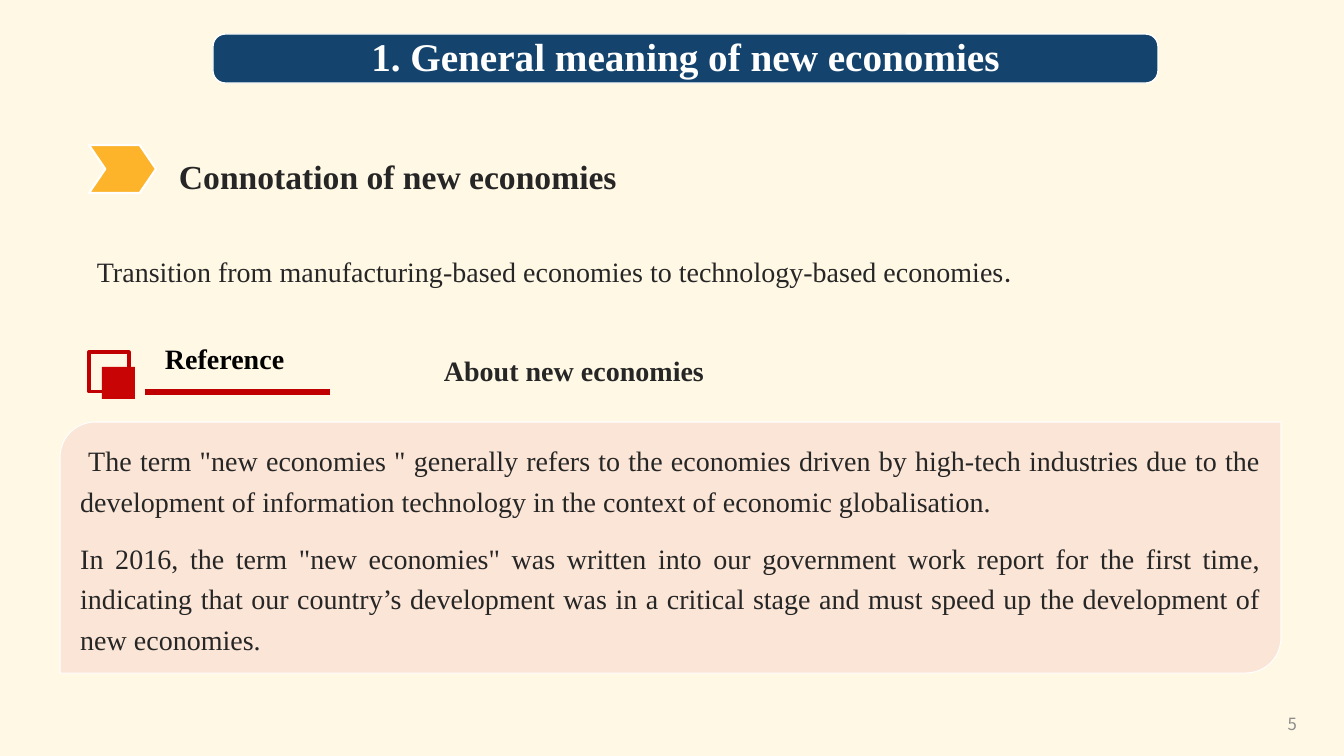
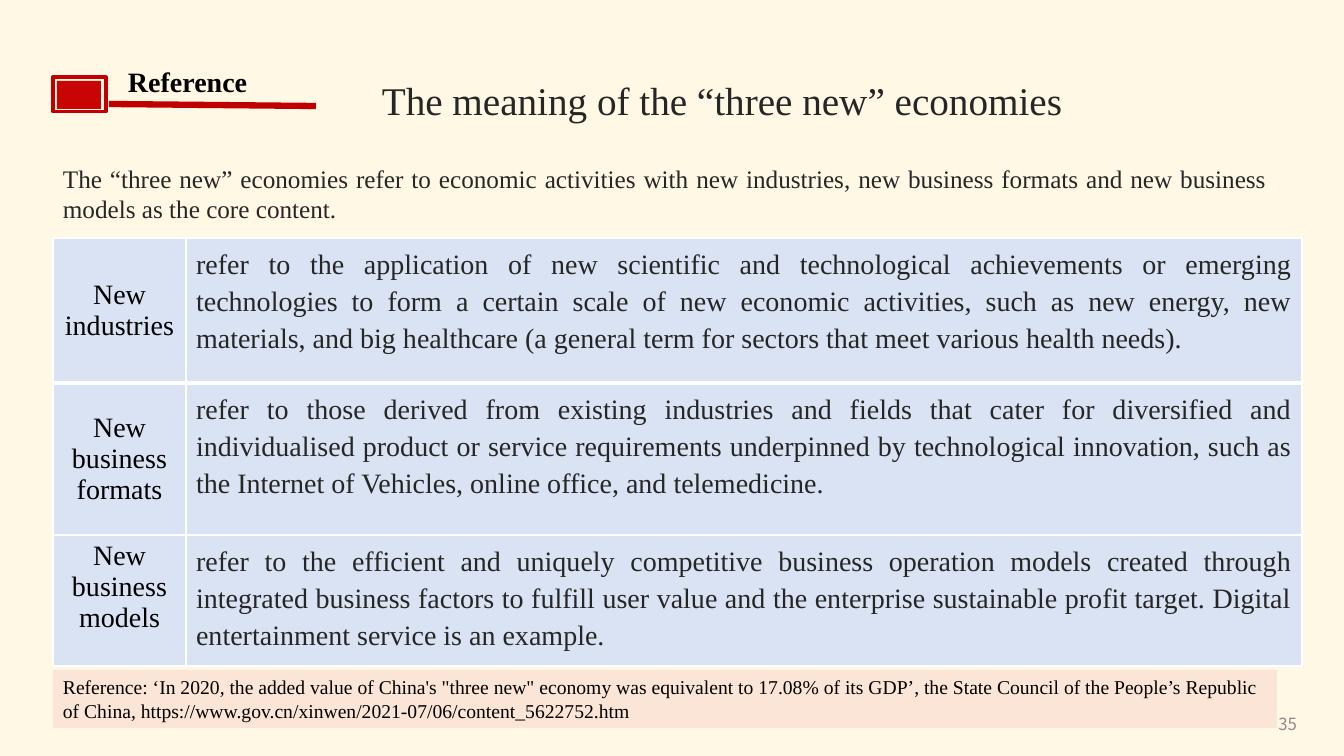
"""Two slides on the meaning of new economies and the "three new" economies."""
from lxml.etree import SubElement
from pptx import Presentation
from pptx.dml.color import RGBColor
from pptx.enum.shapes import MSO_CONNECTOR, MSO_SHAPE
from pptx.enum.text import MSO_ANCHOR, PP_ALIGN
from pptx.oxml.ns import qn
from pptx.util import Emu, Pt

COLORS = {
    "page": "FFF8E5", "navy": "14446E", "amber": "FDB42A", "peach": "FBE5D6",
    "cell": "DAE3F3", "line": "C00000", "red": "C80404", "ink": "262626",
    "black": "000000", "white": "FFFFFF", "grey": "8C8C8C",
}
SERIF = "Times New Roman"
WIDTH, HEIGHT = 1344, 756

CARD = [
    "The term \"new economies \" generally refers to the economies driven by "
    "high-tech industries due to the development of information technology in "
    "the context of economic globalisation.",
    "In 2016, the term \"new economies\" was written into our government work "
    "report for the first time, indicating that our country’s development was "
    "in a critical stage and must speed up the development of new economies.",
]
INTRO = (
    "The “three new” economies refer to economic activities with new industries, "
    "new business formats and new business models as the core content."
)
ECONOMIES = [
    ("New industries", 145, MSO_ANCHOR.MIDDLE,
     "refer to the application of new scientific and technological achievements "
     "or emerging technologies to form a certain scale of new economic "
     "activities, such as new energy, new materials, and big healthcare (a "
     "general term for sectors that meet various health needs)."),
    ("New business formats", 152, MSO_ANCHOR.MIDDLE,
     "refer to those derived from existing industries and fields that cater for "
     "diversified and individualised product or service requirements "
     "underpinned by technological innovation, such as the Internet of "
     "Vehicles, online office, and telemedicine."),
    ("New business models", 131, MSO_ANCHOR.TOP,
     "refer to the efficient and uniquely competitive business operation models "
     "created through integrated business factors to fulfill user value and the "
     "enterprise sustainable profit target. Digital entertainment service is an "
     "example."),
]
SOURCE = (
    "Reference: ‘In 2020, the added value of China's \"three new\" economy was "
    "equivalent to 17.08% of its GDP’, the State Council of the People’s "
    "Republic of China, "
    "https://www.gov.cn/xinwen/2021-07/06/content_5622752.htm"
)


def px(n):
    return Emu(round(n * 12192000 / WIDTH))


def rgb(name):
    return RGBColor.from_string(COLORS[name])


def write(tf, paragraphs, size=20, color="ink", bold=False, font=SERIF,
          align=PP_ALIGN.LEFT, spacing=None, gap=0, anchor=MSO_ANCHOR.TOP):
    tf.word_wrap = True
    tf.vertical_anchor = anchor
    for i, text in enumerate(paragraphs):
        p = tf.add_paragraph() if i else tf.paragraphs[0]
        p.add_run().text = text
        p.alignment = align
        if spacing:
            p.line_spacing = spacing
        if i and gap:
            p.space_before = Pt(gap)
        p.font.name, p.font.size, p.font.bold = font, Pt(size), bold
        p.font.color.rgb = rgb(color)
    return tf


def add_text(slide, box, text, **style):
    sp = slide.shapes.add_textbox(*map(px, box))
    return write(sp.text_frame, [text], **style)


def add_box(slide, box, fill=None, line=None, width=1, kind=MSO_SHAPE.RECTANGLE,
            adjust=()):
    sp = slide.shapes.add_shape(kind, *map(px, box))
    sp.shadow.inherit = False
    for i, value in enumerate(adjust):
        sp.adjustments[i] = value
    if fill:
        sp.fill.solid()
        sp.fill.fore_color.rgb = rgb(fill)
    else:
        sp.fill.background()
    if line:
        sp.line.color.rgb = rgb(line)
        sp.line.width = Pt(width)
    else:
        sp.line.fill.background()
    return sp


def add_reference(slide, frame, core, label, rule):
    add_box(slide, frame, line="line", width=2.25)
    add_box(slide, core, fill="red")
    add_text(slide, label, "Reference", color="black", bold=True)
    cx = slide.shapes.add_connector(MSO_CONNECTOR.STRAIGHT, *map(px, rule))
    cx.line.color.rgb = rgb("line")
    cx.line.width = Pt(4.5)
    SubElement(cx._element.spPr, qn("a:effectLst"))


def add_borders(cell, top, bottom):
    tc_pr = cell._tc.get_or_add_tcPr()
    for side, width in (("L", 1), ("R", 1), ("T", top), ("B", bottom)):
        ln = SubElement(tc_pr, qn(f"a:ln{side}"), w=str(Pt(width)))
        fill = SubElement(ln, qn("a:solidFill"))
        SubElement(fill, qn("a:srgbClr"), val=COLORS["white"])


def add_economies(slide, left, top, widths):
    height = sum(row[1] for row in ECONOMIES)
    table = slide.shapes.add_table(
        len(ECONOMIES), len(widths), *map(px, (left, top, sum(widths), height))
    ).table
    table.first_row = table.horz_banding = False
    for column, width in zip(table.columns, widths):
        column.width = px(width)
    for i, (name, row_height, anchor, meaning) in enumerate(ECONOMIES):
        table.rows[i].height = px(row_height)
        label, body = table.cell(i, 0), table.cell(i, 1)
        for cell in (label, body):
            add_borders(cell, 3 if i == 1 else 1, 3 if i == 0 else 1)
            cell.fill.solid()
            cell.fill.fore_color.rgb = rgb("cell")
        write(label.text_frame, [name], color="black", align=PP_ALIGN.CENTER)
        label.vertical_anchor = anchor
        write(body.text_frame, [meaning], align=PP_ALIGN.JUSTIFY, spacing=1.2)
        body.vertical_anchor = MSO_ANCHOR.TOP


def add_slide(prs, number):
    slide = prs.slides.add_slide(prs.slide_layouts[6])
    add_text(slide, (1005, 704, 302, 40), number, size=12, color="grey",
             font="Noto Sans CJK SC", align=PP_ALIGN.RIGHT,
             anchor=MSO_ANCHOR.MIDDLE)
    return slide


def build_meaning(prs):
    slide = add_slide(prs, "5")
    banner = add_box(slide, (213, 34, 945, 49), "navy", "white",
                     kind=MSO_SHAPE.ROUNDED_RECTANGLE, adjust=[0.25])
    tf = write(banner.text_frame, ["1. General meaning of new economies"],
               size=28, color="white", bold=True, align=PP_ALIGN.CENTER,
               spacing=0.9, anchor=MSO_ANCHOR.MIDDLE)
    tf.margin_top = tf.margin_bottom = px(3)
    add_box(slide, (89, 145, 67, 48), "amber", "white", 1.5,
            kind=MSO_SHAPE.CHEVRON, adjust=[0.34])
    add_text(slide, (169, 135, 790, 60), "Connotation of new economies",
             size=24, bold=True, spacing=Pt(40))
    tf = add_text(slide, (87, 227, 955, 67),
                  "Transition from manufacturing-based economies to "
                  "technology-based economies", spacing=Pt(40))
    r = tf.paragraphs[0].add_run()
    r.text = "."
    r.font.name = "Lato"
    add_reference(slide, (89, 352, 40, 40), (102, 367, 33, 32),
                  (155, 337, 254, 44), (145, 392, 330, 392))
    add_text(slide, (434, 349, 289, 44), "About new economies", bold=True)
    card = add_box(slide, (60, 422, 1221, 251), "peach", "white", 0.75,
                   kind=MSO_SHAPE.ROUND_2_DIAG_RECTANGLE, adjust=[0.14, 0])
    tf = write(card.text_frame, CARD, align=PP_ALIGN.JUSTIFY, spacing=1.2, gap=12)
    tf.paragraphs[0]._p.get_or_add_pPr().set("indent", str(px(8)))


def build_three_new(prs):
    slide = add_slide(prs, "35")
    add_reference(slide, (53, 77, 53, 35), (57, 81, 44, 28),
                  (118, 60, 225, 44), (109, 104, 316, 106))
    add_text(slide, (372, 62, 708, 62), "The meaning of the “three new” economies",
             size=28, spacing=1.2)
    add_text(slide, (53, 158, 1224, 72), INTRO, size=18, align=PP_ALIGN.JUSTIFY)
    add_economies(slide, 53, 238, (133, 1116))
    source = add_box(slide, (53, 670, 1224, 58), "peach")
    write(source.text_frame, [SOURCE], size=14, color="black")


def main():
    prs = Presentation()
    prs.slide_width, prs.slide_height = px(WIDTH), px(HEIGHT)
    page = prs.slide_master.background.fill
    page.solid()
    page.fore_color.rgb = rgb("page")
    build_meaning(prs)
    build_three_new(prs)
    prs.save("out.pptx")


if __name__ == "__main__":
    main()
